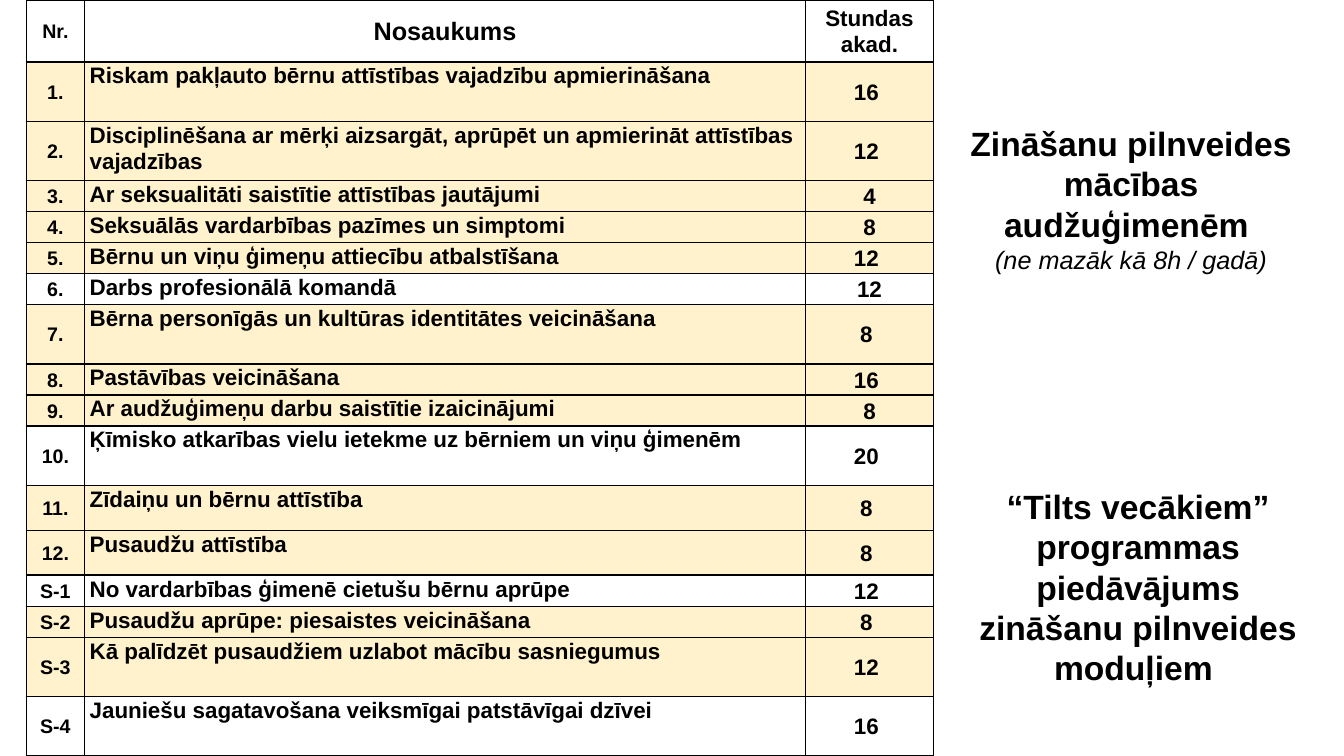
from lxml.etree import SubElement
from pptx import Presentation
from pptx.dml.color import RGBColor
from pptx.enum.text import MSO_ANCHOR as Anchor, MSO_AUTO_SIZE as AutoSize, PP_ALIGN as Align
from pptx.oxml.ns import qn
from pptx.util import Inches, Pt

BLACK = RGBColor(0x00, 0x00, 0x00)
CREAM = RGBColor(0xFF, 0xF2, 0xCC)

HEADER = ("Nr.", "Nosaukums", "Stundas akad.")
HEADER_SIZES = (14, 18, 16)
BODY_SIZES = (14, 16, 16)
COLUMN_SHARES = (4.35, 53.63, 9.53)
HEADER_ROW, TALL, MEDIUM, SHORT = 8.2, 7.85, 5.95, 4.1

MODULES = [
    ("1.", "Riskam pakļauto bērnu attīstības vajadzību apmierināšana", "16 ", TALL, True),
    ("2.", "Disciplinēšana ar mērķi aizsargāt, aprūpēt un apmierināt attīstības vajadzības",
     "12 ", TALL, True),
    ("3.", "Ar seksualitāti saistītie attīstības jautājumi", "4", SHORT, True),
    ("4.", "Seksuālās vardarbības pazīmes un simptomi", "8", SHORT, True),
    ("5.", "Bērnu un viņu ģimeņu attiecību atbalstīšana", "12 ", SHORT, True),
    ("6.", "Darbs profesionālā komandā", "12", SHORT, False),
    ("7.", "Bērna personīgās un kultūras identitātes veicināšana", "8 ", TALL, True),
    ("8.", "Pastāvības veicināšana", "16 ", SHORT, True),
    ("9.", "Ar audžuģimeņu darbu saistītie izaicinājumi", "8", SHORT, True),
    ("10.", "Ķīmisko atkarības vielu ietekme uz bērniem un viņu ģimenēm", "20 ", TALL, False),
    ("11.", "Zīdaiņu un bērnu attīstība", "8 ", MEDIUM, True),
    ("12.", "Pusaudžu attīstība", "8 ", MEDIUM, True),
    ("S-1", "No vardarbības ģimenē cietušu bērnu aprūpe", "12 ", SHORT, False),
    ("S-2", "Pusaudžu aprūpe: piesaistes veicināšana", "8 ", SHORT, True),
    ("S-3", "Kā palīdzēt pusaudžiem uzlabot mācību sasniegumus", "12 ", TALL, True),
    ("S-4", "Jauniešu sagatavošana veiksmīgai patstāvīgai dzīvei", "16 ", TALL, False),
]


class SlideBuilder:
    font = "Arial"
    line_spacing = 1.07
    cell_margin = Inches(0.05)

    def __init__(self, deck):
        self.deck = deck
        self.slide = deck.slides.add_slide(deck.slide_layouts[6])

    def across(self, share):
        return round(self.deck.slide_width * share / 100)

    def down(self, share):
        return round(self.deck.slide_height * share / 100)

    def style(self, para, text, size, bold=True, italic=False, align=Align.CENTER):
        para.text = text
        para.alignment = align
        for span in para.runs:
            span.font.name = self.font
            span.font.size = Pt(size)
            span.font.bold = bold
            span.font.italic = italic
            span.font.color.rgb = BLACK

    def text(self, left, top, width, height, lines):
        box = self.slide.shapes.add_textbox(
            self.across(left), self.down(top), self.across(width), self.down(height))
        frame = box.text_frame
        frame.word_wrap = True
        frame.auto_size = AutoSize.SHAPE_TO_FIT_TEXT
        for index, (text, size, bold, italic) in enumerate(lines):
            para = frame.add_paragraph() if index else frame.paragraphs[0]
            self.style(para, text, size, bold, italic)

    def borders(self, cell, top, bottom):
        properties = cell._tc.get_or_add_tcPr()
        for side, weight in (("L", 1), ("R", 1), ("T", top), ("B", bottom)):
            line = SubElement(properties, qn(f"a:ln{side}"), w=str(Pt(weight)))
            solid = SubElement(line, qn("a:solidFill"))
            SubElement(solid, qn("a:srgbClr"), val=str(BLACK))

    def cell(self, cell, text, size, filled, is_title, top, bottom):
        cell.margin_left = cell.margin_right = self.cell_margin
        cell.margin_top = cell.margin_bottom = 0
        cell.vertical_anchor = Anchor.TOP if is_title else Anchor.MIDDLE
        para = cell.text_frame.paragraphs[0]
        self.style(para, text, size, align=Align.LEFT if is_title else Align.CENTER)
        para.line_spacing = self.line_spacing
        if is_title:
            para.space_before = para.space_after = Pt(6)
        self.borders(cell, top, bottom)
        if filled:
            cell.fill.solid()
            cell.fill.fore_color.rgb = CREAM
        else:
            cell.fill.background()

    def table(self, left, top, header, modules):
        rows = [(*header, HEADER_ROW, False), *modules]
        frame = self.slide.shapes.add_table(
            len(rows), len(header), self.across(left), self.down(top),
            self.across(sum(COLUMN_SHARES)), self.down(100))
        table = frame.table
        table.first_row = table.horz_banding = False
        for column, share in zip(table.columns, COLUMN_SHARES):
            column.width = self.across(share)
        for index, (*texts, height, filled) in enumerate(rows):
            table.rows[index].height = self.down(height)
            sizes = BODY_SIZES if index else HEADER_SIZES
            upper = 1.5 if texts[0] == "S-1" else 1
            lower = 1.5 if texts[0] == "12." else 1
            for position, (text, size) in enumerate(zip(texts, sizes)):
                is_title = index > 0 and position == 1
                self.cell(table.cell(index, position), text, size, filled,
                          is_title, upper, lower)


def main():
    deck = Presentation()
    deck.slide_width, deck.slide_height = Inches(13.33), Inches(7.5)
    page = SlideBuilder(deck)
    page.table(1.95, 0, HEADER, MODULES)
    page.text(71.33, 63.6, 26.7, 28.27, [
        ("“Tilts vecākiem” programmas piedāvājums zināšanu pilnveides moduļiem ", 24, True, False),
    ])
    page.text(70.28, 15.6, 27.75, 21.6, [
        ("Zināšanu pilnveides mācības audžuģimenēm ", 24, True, False),
        ("(ne mazāk kā 8h / gadā)", 18, False, True),
    ])
    deck.save("out.pptx")


if __name__ == "__main__":
    main()
